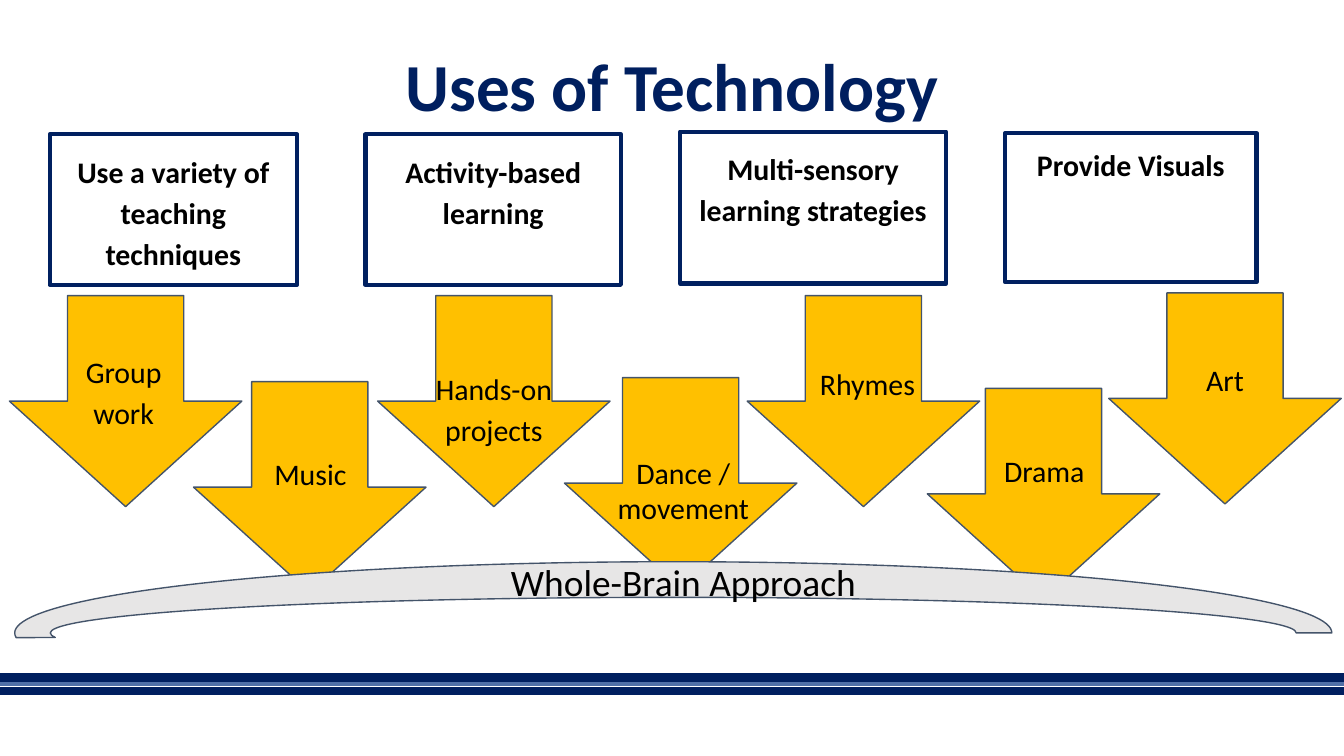
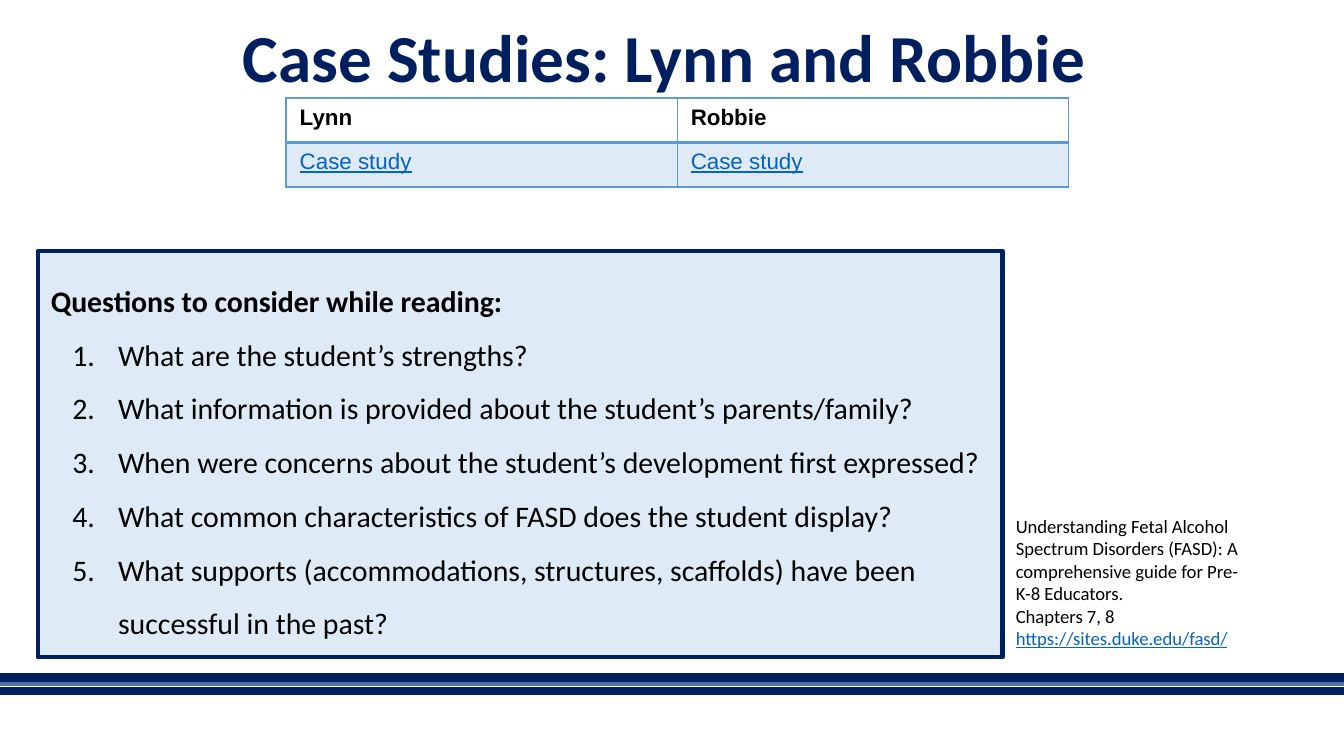
from typing import NamedTuple

from lxml import etree
from pptx import Presentation
from pptx.dml import color
from pptx.enum import shapes, text
from pptx.oxml import ns
from pptx.util import Inches, Pt

NAVY = "001F5F"
FRAME_NAVY = "002060"
BAND_BLUE = "5070A7"
GOLD = "FFC000"
SLATE = "44546A"
ARC_GRAY = "E7E6E6"
PALE_BLUE = "DEEBF7"
TABLE_BLUE = "5B9BD5"
LINK_BLUE = "0563C1"
BLACK = "000000"
SLIDE_WIDTH = Inches(10)
SLIDE_HEIGHT = SLIDE_WIDTH * 9 // 16
TITLE_ONLY = 5
CENTER = text.PP_ALIGN.CENTER
LEFT = text.PP_ALIGN.LEFT


class Box(NamedTuple):
    left: float
    top: float
    width: float
    height: float


class Stripe(NamedTuple):
    y: float
    color: str
    weight: float


class Strategy(NamedTuple):
    label: str
    box: Box
    spacing: float = 1.15


class Activity(NamedTuple):
    """A down arrow and the text box laid over it."""
    label: str
    left: float
    top: float
    label_box: Box
    spacing: float = 1.0


class Style(NamedTuple):
    size: float = 16
    bold: bool = False
    color: str = BLACK
    align: text.PP_ALIGN = LEFT
    spacing: float = 1.0
    underline: bool = False
    font: str = "Calibri"


STRIPES = [Stripe(5.04, NAVY, 4.5), Stripe(5.09, BAND_BLUE, 2.25), Stripe(5.14, NAVY, 4.5)]

STRATEGIES = [
    Strategy("Use a variety of teaching techniques", Box(0.37, 1, 1.84, 1.12)),
    Strategy("Activity-based learning", Box(2.72, 1, 1.9, 1.12)),
    Strategy("Multi-sensory learning strategies", Box(5.06, 0.98, 1.98, 1.13)),
    Strategy("Provide Visuals", Box(7.48, 0.99, 1.87, 1.11), 1.0),
]

ARROW_WIDTH, ARROW_HEIGHT = 1.73, 1.57
ACTIVITIES = [
    Activity("Group work", 0.07, 2.2, Box(0.5, 2.49, 0.84, 0.74), 1.15),
    Activity("Music", 1.44, 2.84, Box(1.76, 3.29, 1.1, 0.45)),
    Activity("Hands-on projects", 2.81, 2.2, Box(3.13, 2.62, 1.09, 0.83), 1.15),
    Activity("Dance / movement", 4.2, 2.81, Box(4.4, 3.28, 1.37, 0.83)),
    Activity("Rhymes", 5.56, 2.2, Box(5.89, 2.62, 1.13, 0.2)),
    Activity("Drama", 6.9, 2.89, Box(7.31, 3.27, 0.92, 0.3)),
    Activity("Art", 8.25, 2.18, Box(8.81, 2.59, 0.61, 0.21)),
]

QUESTIONS = [
    "What are the student’s strengths?",
    "What information is provided about the student’s parents/family?",
    "When were concerns about the student’s development first expressed?",
    "What common characteristics of FASD does the student display?",
    "What supports (accommodations, structures, scaffolds) have been successful in the past?",
]

CASE_ROWS = [("Lynn", "Robbie"), ("Case study", "Case study")]


def rgb(hex_color: str) -> color.RGBColor:
    return color.RGBColor.from_string(hex_color)


def inches(box: Box) -> list:
    return [Inches(value) for value in box]


def add_element(parent, tag: str, **attributes: str):
    element = etree.SubElement(parent, ns.qn(tag))
    for name, value in attributes.items():
        element.set(name, value)
    return element


def write(paragraph, content: str, style: Style) -> None:
    paragraph.text = content
    paragraph.alignment = style.align
    paragraph.line_spacing = style.spacing
    font = paragraph.font
    font.name, font.size, font.bold = style.font, Pt(style.size), style.bold
    font.underline = style.underline
    font.color.rgb = rgb(style.color)


def prepare_frame(frame, inset: float = 0.1, anchor=text.MSO_ANCHOR.TOP) -> None:
    frame.word_wrap = True
    frame.auto_size = text.MSO_AUTO_SIZE.NONE
    frame.vertical_anchor = anchor
    frame.margin_left = frame.margin_right = Inches(0.1)
    frame.margin_top = frame.margin_bottom = Inches(inset)


def add_outlined(parent, kind, box: Box, fill: str | None, line: str, weight: float):
    shape = parent.add_shape(kind, *inches(box))
    shape.shadow.inherit = False
    if fill:
        shape.fill.solid()
        shape.fill.fore_color.rgb = rgb(fill)
    else:
        shape.fill.background()
    shape.line.color.rgb = rgb(line)
    shape.line.width = Pt(weight)
    prepare_frame(shape.text_frame)
    return shape


def add_label(parent, box: Box, content: str, style: Style) -> None:
    frame = parent.add_textbox(*inches(box)).text_frame
    prepare_frame(frame)
    write(frame.paragraphs[0], content, style)


def add_title_slide(presentation, title: str, top: float, inset: float, anchor):
    slide = presentation.slides.add_slide(presentation.slide_layouts[TITLE_ONLY])
    shape = slide.shapes.title
    shape.left, shape.top, shape.width, shape.height = inches(Box(0.69, top, 8.62, 1.09))
    prepare_frame(shape.text_frame, inset, anchor)
    write(shape.text_frame.paragraphs[0], title,
          Style(36, True, NAVY, CENTER, 0.9))
    return slide


def add_master_band(presentation, slide) -> None:
    """Draw the stripes on a slide, then move them to the master all slides share."""
    for stripe in STRIPES:
        connector = slide.shapes.add_connector(
            shapes.MSO_CONNECTOR.STRAIGHT, 0, Inches(stripe.y),
            SLIDE_WIDTH, Inches(stripe.y))
        connector.line.color.rgb = rgb(stripe.color)
        connector.line.width = Pt(stripe.weight)
        add_element(connector.element.spPr, "a:effectLst")
        presentation.slide_master.shapes.element.append(connector.element)


def add_activity(slide, activity: Activity) -> None:
    group = slide.shapes.add_group_shape()
    arrow_box = Box(activity.left, activity.top, ARROW_WIDTH, ARROW_HEIGHT)
    add_outlined(group.shapes, shapes.MSO_SHAPE.DOWN_ARROW, arrow_box, GOLD, SLATE, 0.75)
    add_label(group.shapes, activity.label_box, activity.label,
              Style(align=CENTER, spacing=activity.spacing))


def build_technology_slide(presentation):
    slide = add_title_slide(presentation, "Uses of Technology", 0.3, 0.1, text.MSO_ANCHOR.TOP)
    for strategy in STRATEGIES:
        shape = add_outlined(slide.shapes, shapes.MSO_SHAPE.RECTANGLE, strategy.box,
                             None, FRAME_NAVY, 2.25)
        write(shape.text_frame.paragraphs[0], strategy.label,
              Style(bold=True, align=CENTER, spacing=strategy.spacing))
    for activity in ACTIVITIES:
        add_activity(slide, activity)
    arc = add_outlined(slide.shapes, shapes.MSO_SHAPE.BLOCK_ARC, Box(0.11, 4.18, 9.8, 1.06),
                       ARC_GRAY, SLATE, 0.75)
    for index, value in enumerate((107.75, 0, 0.25)):
        arc.adjustments[index] = value
    add_label(slide.shapes, Box(3.49, 4.06, 3.19, 0.21), "Whole-Brain Approach",
              Style(20, align=CENTER))
    return slide


def number_paragraph(paragraph) -> None:
    properties = paragraph._p.get_or_add_pPr()
    properties.set("marL", str(Inches(0.5)))
    properties.set("indent", str(Inches(-0.34)))
    bullet_color = add_element(properties, "a:buClr")
    add_element(bullet_color, "a:srgbClr", val=BLACK)
    add_element(properties, "a:buFont", typeface="Calibri")
    add_element(properties, "a:buAutoNum", type="arabicPeriod")


def add_questions(slide) -> None:
    shape = add_outlined(slide.shapes, shapes.MSO_SHAPE.RECTANGLE, Box(0.28, 1.87, 7.18, 3.02),
                         PALE_BLUE, FRAME_NAVY, 2.25)
    frame = shape.text_frame
    write(frame.paragraphs[0], "Questions to consider while reading:",
          Style(bold=True, spacing=1.5))
    for question in QUESTIONS:
        paragraph = frame.add_paragraph()
        number_paragraph(paragraph)
        write(paragraph, question, Style(spacing=1.5))


def set_borders(cell, bottom_weight: float) -> None:
    properties = cell._tc.get_or_add_tcPr()
    weights = {"a:lnL": 1, "a:lnR": 1, "a:lnT": 1, "a:lnB": bottom_weight}
    for index, (tag, weight) in enumerate(weights.items()):
        line = add_element(properties, tag, w=str(Pt(weight)))
        add_element(add_element(line, "a:solidFill"), "a:srgbClr", val=TABLE_BLUE)
        properties.insert(index, line)


def fill_translucent(cell, hex_color: str, percent: int) -> None:
    cell.fill.solid()
    cell.fill.fore_color.rgb = rgb(hex_color)
    fill_color = cell._tc.tcPr.find(ns.qn("a:solidFill")).find(ns.qn("a:srgbClr"))
    add_element(fill_color, "a:alpha", val=str(percent * 1000))


def add_case_table(slide) -> None:
    table = slide.shapes.add_table(2, 2, *inches(Box(2.13, 0.73, 5.82, 0.66))).table
    table.horz_banding = False
    for row, labels in enumerate(CASE_ROWS):
        for column, label in enumerate(labels):
            cell = table.cell(row, column)
            if row == 0:
                cell.fill.background()
                style = Style(12, True, font="Arial")
            else:
                fill_translucent(cell, TABLE_BLUE, 20)
                style = Style(12, color=LINK_BLUE, underline=True, font="Arial")
            set_borders(cell, 2 if row == 0 else 1)
            write(cell.text_frame.paragraphs[0], label, style)


def add_reference(slide) -> None:
    frame = slide.shapes.add_textbox(*inches(Box(7.46, 3.78, 1.94, 1.11))).text_frame
    prepare_frame(frame, 0.05)
    frame.auto_size = text.MSO_AUTO_SIZE.SHAPE_TO_FIT_TEXT
    write(frame.paragraphs[0],
          "Understanding Fetal Alcohol Spectrum Disorders (FASD): "
          "A comprehensive guide for Pre-K-8 Educators.", Style(10))
    write(frame.add_paragraph(), "Chapters 7, 8", Style(10))
    write(frame.add_paragraph(), "https://sites.duke.edu/fasd/",
          Style(10, color=LINK_BLUE, underline=True))


def build_case_slide(presentation) -> None:
    slide = add_title_slide(presentation, "Case Studies: Lynn and Robbie ", -0.09, 0.05,
                            text.MSO_ANCHOR.MIDDLE)
    add_questions(slide)
    add_case_table(slide)
    add_reference(slide)


def main() -> None:
    presentation = Presentation()
    presentation.slide_width, presentation.slide_height = SLIDE_WIDTH, SLIDE_HEIGHT
    technology_slide = build_technology_slide(presentation)
    add_master_band(presentation, technology_slide)
    build_case_slide(presentation)
    presentation.save("out.pptx")


if __name__ == "__main__":
    main()
